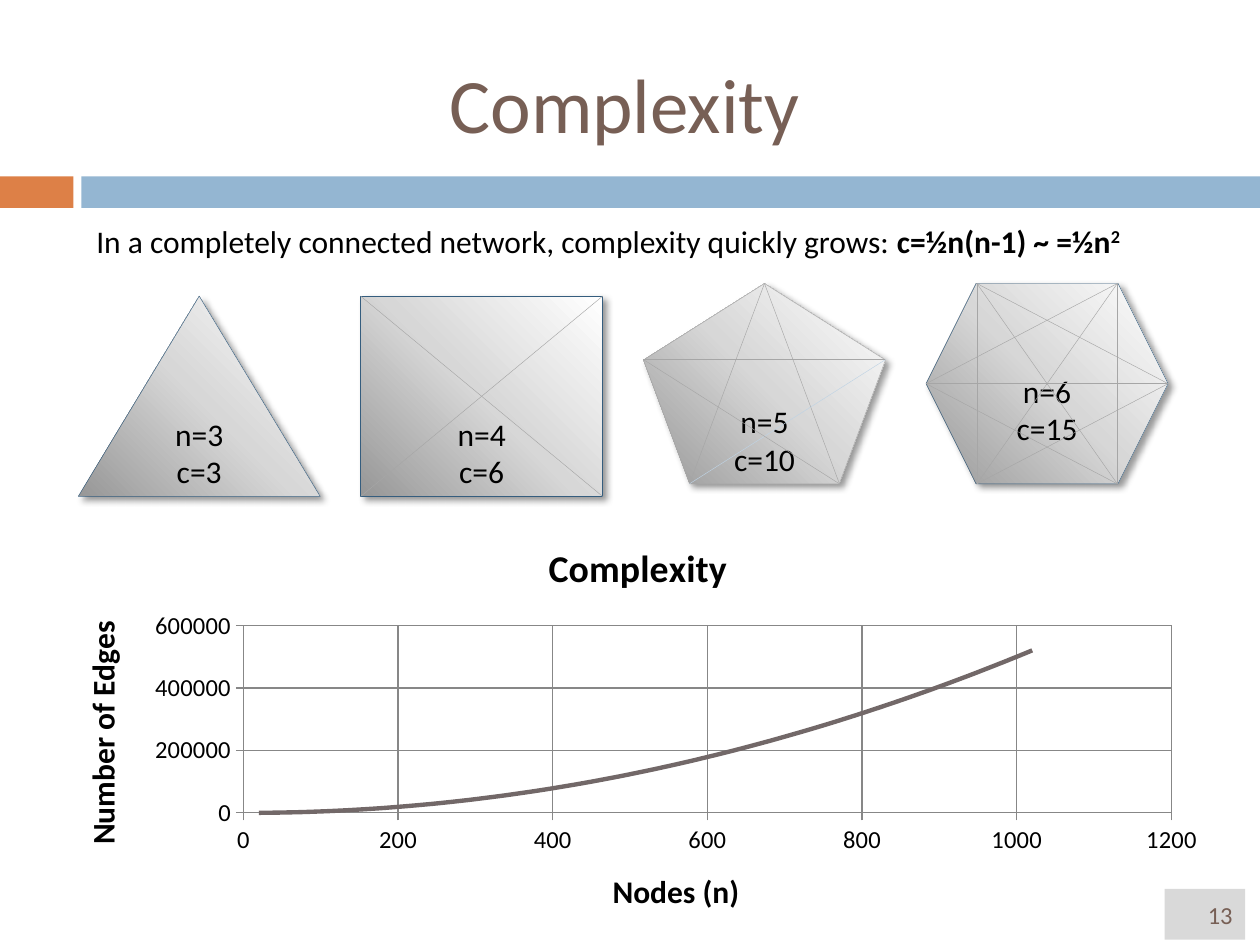
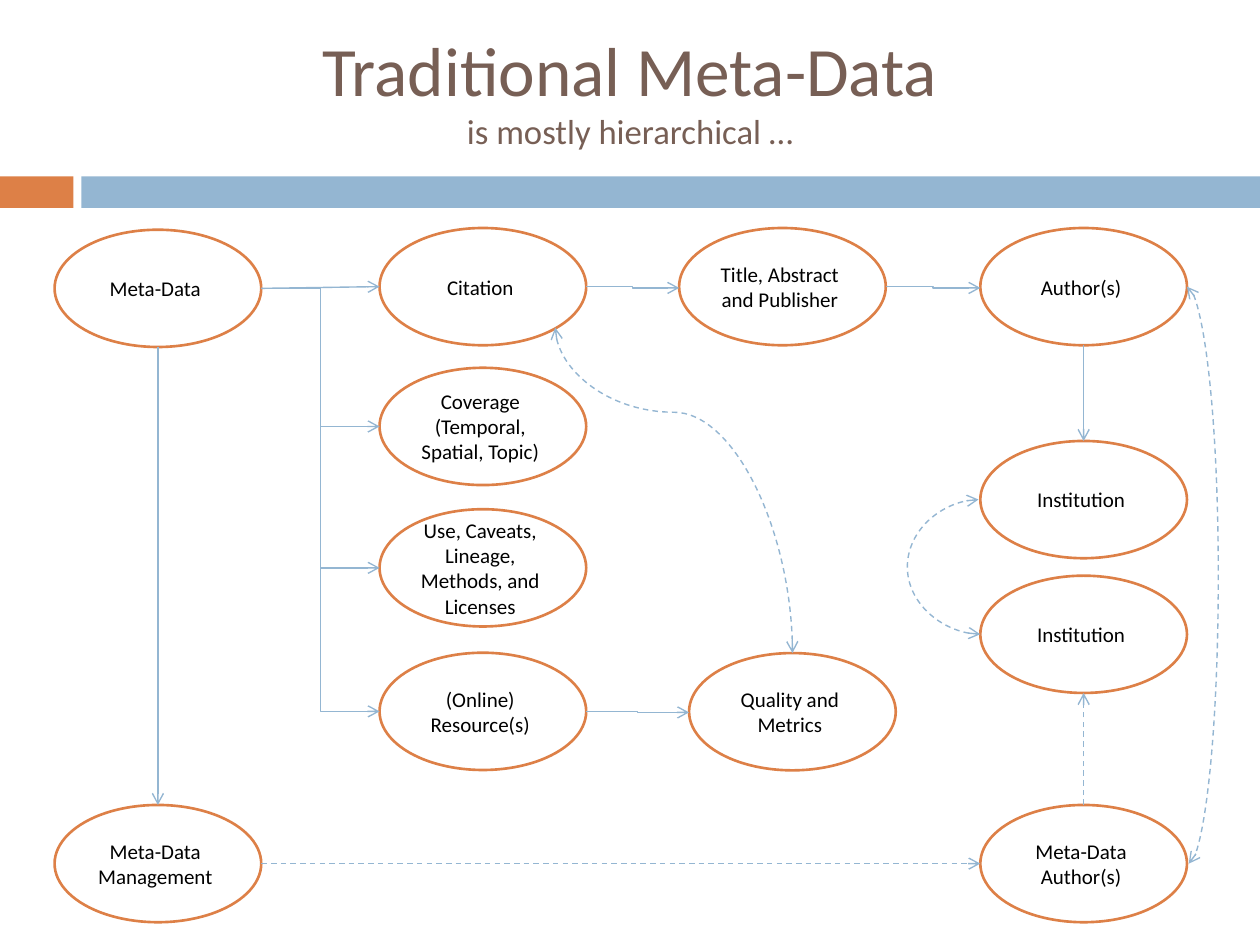
from copy import deepcopy
from dataclasses import dataclass
from itertools import combinations

from lxml.etree import SubElement
from pptx import Presentation
from pptx.chart.data import XyChartData
from pptx.dml.color import RGBColor
from pptx.enum.chart import XL_CHART_TYPE, XL_MARKER_STYLE, XL_TICK_MARK
from pptx.enum.dml import MSO_LINE
from pptx.enum.shapes import MSO_CONNECTOR, MSO_SHAPE
from pptx.enum.text import MSO_ANCHOR, PP_ALIGN
from pptx.oxml import parse_xml
from pptx.oxml.ns import nsdecls, qn
from pptx.util import Pt

RECT, OVAL = MSO_SHAPE.RECTANGLE, MSO_SHAPE.OVAL
WEDGE, PENTA, HEXA = MSO_SHAPE.ISOSCELES_TRIANGLE, MSO_SHAPE.REGULAR_PENTAGON, MSO_SHAPE.HEXAGON
LINE, ELBOW, CURVE = MSO_CONNECTOR.STRAIGHT, MSO_CONNECTOR.ELBOW, MSO_CONNECTOR.CURVE
LEFT, CENTER, RIGHT = PP_ALIGN.LEFT, PP_ALIGN.CENTER, PP_ALIGN.RIGHT
MIDDLE, BOTTOM = MSO_ANCHOR.MIDDLE, MSO_ANCHOR.BOTTOM
SCATTER, BARE = XL_CHART_TYPE.XY_SCATTER, XL_MARKER_STYLE.NONE
OUT, NONE = XL_TICK_MARK.OUTSIDE, XL_TICK_MARK.NONE
DASH = MSO_LINE.DASH

FONT = "Calibri"
COLORS = {
    "orange": "DD8047", "blue": "94B6D2", "brown": "775F55", "black": "000000",
    "white": "FFFFFF", "page": "D9D9D9", "navy": "355D7E", "gray": "A6A6A6",
    "pale": "BFD3E4", "grid": "878787", "trend": "726868",
    "dark": "979797", "mid": "D7D7D7",
}
POLY_W, POLY_H = 138.3, 114.5
OVAL_W, OVAL_H = 118.1, 67
TOP, WEST, SOUTH, EAST, CORNER = (0.5, 0), (0, 0.5), (0.5, 1), (1, 0.5), (0.85, 0.85)


@dataclass
class Poly:
    kind: int
    left: float
    top: float
    lines: list
    points: tuple = ()
    edge: str = "navy"
    faint: tuple = ()


@dataclass
class Node:
    left: float
    top: float
    lines: list

    def spot(self, side: tuple) -> tuple:
        return self.left + side[0] * OVAL_W, self.top + side[1] * OVAL_H


@dataclass
class Link:
    start: str
    out: tuple
    end: str
    into: tuple
    kind: int = LINE
    dash: bool = False
    both: bool = False
    dx: float = 0
    dy: float = 0
    bend: float = 0.5
    turn: bool = False


POLYS = [
    Poly(WEDGE, 44.7, 169.2, ["n=3", "c=3"]),
    Poly(RECT, 206.1, 169.2, ["n=4", "c=6"], ((0, 0), (1, 0), (1, 1), (0, 1))),
    Poly(PENTA, 367.7, 162, ["n=5", "c=10"],
         ((0.5, 0), (1, 0.38), (0.81, 1), (0.19, 1), (0, 0.38)), "gray", (1, 3)),
    Poly(HEXA, 529.2, 162, ["n=6", "c=15"],
         ((0.21, 0), (0.79, 0), (1, 0.5), (0.79, 1), (0.21, 1), (0, 0.5))),
]
COLS = (31.2, 216.9, 388.1, 560.2)
ROW, BASE = 130.3, 460
NODES = {
    "cite": Node(COLS[1], ROW, ["Citation"]),
    "cover": Node(COLS[1], 210.2, ["Coverage", "(Temporal, Spatial, Topic)"]),
    "use": Node(COLS[1], 291, ["Use, Caveats, Lineage, Methods, and Licenses"]),
    "online": Node(COLS[1], 373, ["(Online)", "Resource(s)"]),
    "meta": Node(COLS[0], 131.3, ["Meta-Data"]),
    "manage": Node(COLS[0], BASE, ["Meta-Data", "Management"]),
    "title": Node(COLS[2], ROW, ["Title, Abstract and Publisher"]),
    "author": Node(COLS[3], ROW, ["Author(s)"]),
    "writer": Node(COLS[3], BASE, ["Meta-Data", "Author(s)"]),
    "lower": Node(COLS[3], 329, ["Institution"]),
    "upper": Node(COLS[3], 252, ["Institution"]),
    "metric": Node(393.8, 373.2, ["Quality and Metrics"]),
}
LINKS = [
    Link("meta", EAST, "cite", WEST),
    *[Link("meta", EAST, name, WEST, ELBOW) for name in ("cover", "use", "online")],
    Link("meta", SOUTH, "manage", TOP),
    Link("cite", EAST, "title", WEST, ELBOW, dy=0.7),
    Link("title", EAST, "author", WEST, ELBOW, dy=0.7),
    Link("manage", EAST, "writer", WEST, dash=True),
    Link("lower", WEST, "upper", WEST, CURVE, True, True, dx=-1, bend=42),
    Link("writer", TOP, "lower", SOUTH, dash=True),
    Link("author", SOUTH, "upper", TOP),
    Link("author", EAST, "writer", EAST, CURVE, True, True, dx=1, bend=18),
    Link("online", EAST, "metric", WEST, ELBOW, dy=0.4),
    Link("cite", CORNER, "metric", TOP, CURVE, True, True, bend=0.26, turn=True),
]


def rgb(name: str) -> RGBColor:
    return RGBColor.from_string(COLORS[name])


def style(font, size: float, color: str = "black", bold: bool = False) -> None:
    font.name, font.size, font.bold = FONT, Pt(size), bold
    font.color.rgb = rgb(color)


def write(frame, lines: list, size: float, color: str = "black",
          align: int = CENTER, anchor: int = MIDDLE) -> None:
    frame.word_wrap = True
    frame.vertical_anchor = anchor
    for i, line in enumerate(lines):
        para = frame.add_paragraph() if i else frame.paragraphs[0]
        para.text, para.alignment = line, align
        style(para.font, size, color)


def block(slide, kind: int, box: tuple, fill: str, edge: str = "", weight: float = 1):
    shape = slide.shapes.add_shape(kind, *map(Pt, box))
    shape.shadow.inherit = False
    shape.fill.solid()
    shape.fill.fore_color.rgb = rgb(fill)
    if edge:
        shape.line.color.rgb = rgb(edge)
        shape.line.width = Pt(weight)
    else:
        shape.line.fill.background()
    return shape


def wire(slide, kind: int, ends: tuple, color: str, weight: float):
    line = slide.shapes.add_connector(kind, *map(Pt, ends))
    line.line.color.rgb = rgb(color)
    line.line.width = Pt(weight)
    SubElement(line._element.spPr, qn("a:effectLst"))
    return line


def start_slide(deck, left: float, top: float, title: list):
    slide = deck.slides.add_slide(deck.slide_layouts[6])
    block(slide, RECT, (0, 100.8, 42, 18), "orange")
    block(slide, RECT, (46.5, 100.8, 673.5, 18), "blue")
    frame = slide.shapes.add_textbox(Pt(left), Pt(top), Pt(648), Pt(72)).text_frame
    frame.word_wrap, frame.vertical_anchor = True, MIDDLE
    para = frame.paragraphs[0]
    para.alignment = CENTER
    for i, (text, size) in enumerate(title):
        if i:
            para.add_line_break()
        run = para.add_run()
        run.text = text
        style(run.font, size, "brown")
    return slide


def draw_poly(slide, poly: Poly) -> None:
    shape = block(slide, poly.kind, (poly.left, poly.top, POLY_W, POLY_H),
                  "mid", poly.edge, 0.25)
    fill = shape.fill
    fill.gradient()
    fill.gradient_angle = 45
    first = fill.gradient_stops[0]._gs
    first.addnext(deepcopy(first))
    for i, (stop, name) in enumerate(zip(fill.gradient_stops, ("dark", "mid", "white"))):
        stop.color.rgb = rgb(name)
        stop.position = i / 2
    glow = SubElement(shape._element.spPr.find(qn("a:effectLst")), qn("a:outerShdw"),
                      blurRad=str(Pt(4)), dist=str(Pt(3)), dir="2700000", rotWithShape="0")
    tint = SubElement(glow, qn("a:srgbClr"), val=COLORS["black"])
    SubElement(tint, qn("a:alpha"), val="40000")
    write(shape.text_frame, poly.lines, 18, anchor=BOTTOM)
    count = len(poly.points)
    for a, b in combinations(range(count), 2):
        if b - a not in (1, count - 1):
            ends = [base + part * size for i in (a, b) for base, part, size in
                    zip((poly.left, poly.top), poly.points[i], (POLY_W, POLY_H))]
            wire(slide, LINE, ends, "pale" if (a, b) == poly.faint else "gray", 0.25)


def draw_node(slide, node: Node) -> None:
    shape = block(slide, OVAL, (node.left, node.top, OVAL_W, OVAL_H), "white", "orange", 1.5)
    frame = shape.text_frame
    frame.margin_left, frame.margin_right = Pt(2.9), Pt(5.8)
    frame.margin_top = frame.margin_bottom = Pt(3.6)
    write(frame, node.lines, 12)


def draw_link(slide, link: Link) -> None:
    x1, y1 = NODES[link.start].spot(link.out)
    x2, y2 = NODES[link.end].spot(link.into)
    ends = x1, y1, x2 + link.dx, y2 + link.dy
    if link.turn:
        x, y, w, h = (x1 + x2) / 2, (y1 + y2) / 2, (y2 - y1) / 2, (x2 - x1) / 2
        ends = x + w, y - h, x - w, y + h
    line = wire(slide, link.kind, ends, "blue", 0.79)
    props = line._element.spPr
    if link.turn:
        props.find(qn("a:xfrm")).set("rot", "16200000")
    if link.kind == CURVE:
        SubElement(props.find(qn("a:prstGeom")).find(qn("a:avLst")), qn("a:gd"),
                   name="adj1", fmla=f"val {round(link.bend * 100000)}")
    if link.dash:
        line.line.dash_style = DASH
    for tag in ("a:headEnd", "a:tailEnd")[0 if link.both else 1:]:
        SubElement(props.find(qn("a:ln")), qn(tag), type="arrow")


def set_axis(axis, title: str, top: int, step: int) -> None:
    axis.minimum_scale, axis.maximum_scale, axis.major_unit = 0, top, step
    axis.major_tick_mark, axis.minor_tick_mark = OUT, NONE
    axis.has_major_gridlines = True
    for line in (axis.major_gridlines.format.line, axis.format.line):
        line.color.rgb = rgb("grid")
        line.width = Pt(0.75)
    style(axis.tick_labels.font, 14)
    axis.tick_labels.number_format = "General"
    axis.tick_labels.number_format_is_linked = False
    axis.axis_title.text_frame.text = title
    style(axis.axis_title.text_frame.paragraphs[0].font, 18, bold=True)


def draw_chart(slide) -> None:
    data = XyChartData()
    series = data.add_series("Complexity")
    nodes = [0] * 5 + [10, 10, 20, 30, 60, 130, 260, 510, 1020]
    edges = [0] * 10 + [10000, 30000, 130000, 520000]
    for x, y in zip(nodes, edges):
        series.add_data_point(x, y)
    chart = slide.shapes.add_chart(SCATTER, Pt(33), Pt(296.6), Pt(663), Pt(243.4), data).chart
    style(chart.font, 18)
    chart.has_legend = False
    chart.has_title = True
    chart.chart_title.text_frame.text = "Complexity"
    style(chart.chart_title.text_frame.paragraphs[0].font, 21.6, bold=True)
    set_axis(chart.category_axis, "Nodes (n)", 1200, 200)
    set_axis(chart.value_axis, "Number of Edges", 600000, 200000)
    turned = chart.value_axis.axis_title.text_frame._txBody.bodyPr
    turned.set("rot", "-5400000")
    turned.set("vert", "horz")
    plot = chart.plots[0]
    plot.vary_by_categories = False
    dots = plot.series[0]
    dots.marker.style = BARE
    dots.format.line.fill.background()
    dots._element.find(qn("c:xVal")).addprevious(parse_xml(
        f'<c:trendline {nsdecls("c", "a")}><c:spPr><a:ln w="{Pt(2.5)}"><a:solidFill>'
        f'<a:srgbClr val="{COLORS["trend"]}"/></a:solidFill></a:ln></c:spPr>'
        '<c:trendlineType val="poly"/><c:order val="2"/>'
        '<c:dispRSqr val="0"/><c:dispEq val="0"/></c:trendline>'))
    area = plot._element.getparent()
    for old in area.findall(qn("c:layout")):
        area.remove(old)
    parts = [("layoutTarget", "inner"), ("xMode", "edge"), ("yMode", "edge"),
             ("x", 0.16), ("y", 0.25), ("w", 0.8), ("h", 0.44)]
    inner = "".join(f'<c:{tag} val="{val}"/>' for tag, val in parts)
    area.insert(0, parse_xml(f'<c:layout {nsdecls("c")}><c:manualLayout>{inner}'
                             '</c:manualLayout></c:layout>'))


def draw_growth(deck) -> None:
    slide = start_slide(deck, 33, 23, [("Complexity", 44)])
    page = block(slide, RECT, (665.5, 508, 46, 29), "page")
    write(page.text_frame, ["13"], 14, "brown", RIGHT)
    for poly in POLYS:
        draw_poly(slide, poly)
    frame = slide.shapes.add_textbox(Pt(48), Pt(123), Pt(640), Pt(29)).text_frame
    write(frame, ["In a completely connected network, complexity quickly grows: "], 18, align=LEFT)
    para = frame.paragraphs[0]
    para.font.bold = None
    for text in ("c=½n(n-1) ~ =½n", "2"):
        run = para.add_run()
        run.text = text
        run.font.bold = True
    for run in para.runs:
        style(run.font, 18, bold=run.font.bold)
    run.font._element.set("baseline", "30000")
    draw_chart(slide)


def draw_map(deck) -> None:
    slide = start_slide(deck, 36, 15, [("Traditional Meta-Data", 39.6),
                                       ("is mostly hierarchical …", 19.8)])
    for node in NODES.values():
        draw_node(slide, node)
    for link in LINKS:
        draw_link(slide, link)


def main() -> None:
    deck = Presentation()
    deck.slide_width, deck.slide_height = Pt(720), Pt(540)
    draw_growth(deck)
    draw_map(deck)
    deck.save("out.pptx")


if __name__ == "__main__":
    main()
